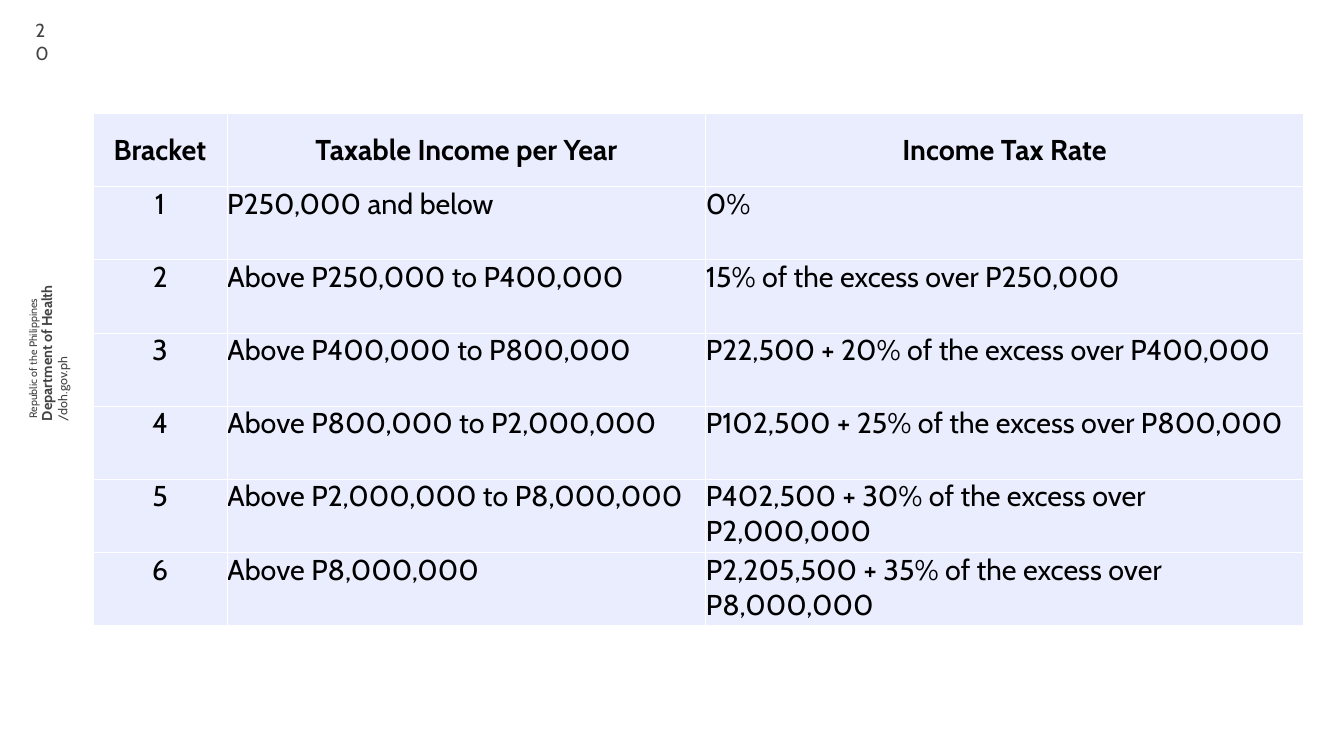
"""Build the slide with the income tax brackets."""
from dataclasses import dataclass
from typing import Any

import pptx
import pptx.dml.color
import pptx.enum.text
import pptx.oxml
import pptx.oxml.ns
import pptx.util

SCALE = 9144
GREY, BLACK, WHITE, PALE = "434343", "000000", "FFFFFF", "E9EDFD"
LEFT = pptx.enum.text.PP_ALIGN.LEFT
MID = pptx.enum.text.PP_ALIGN.CENTER
TOP = pptx.enum.text.MSO_ANCHOR.TOP
CORE = pptx.enum.text.MSO_ANCHOR.MIDDLE
FIT = pptx.enum.text.MSO_AUTO_SIZE.SHAPE_TO_FIT_TEXT
FIXED = pptx.enum.text.MSO_AUTO_SIZE.NONE
SIDES = ("left", "right", "top", "bottom")

WIDTHS = (208, 742, 926)
ROW = 113.4
BRACKETS = (
    ("Bracket", "Taxable Income per Year", "Income Tax Rate"),
    ("1", "P250,000 and below", "0%"),
    ("2", "Above P250,000 to P400,000", "15% of the excess over P250,000"),
    ("3", "Above P400,000 to P800,000", "P22,500 + 20% of the excess over P400,000"),
    ("4", "Above P800,000 to P2,000,000", "P102,500 + 25% of the excess over P800,000"),
    ("5", "Above P2,000,000 to P8,000,000", "P402,500 + 30% of the excess over P2,000,000"),
    ("6", "Above P8,000,000", "P2,205,500 + 35% of the excess over P8,000,000"),
)


@dataclass(frozen=True)
class Label:
    text: str
    left: int
    top: int
    width: int
    height: int
    size: int
    bold: bool = False
    align: Any = MID
    turn: int = 270
    inset: int = 10
    anchor: Any = TOP
    fit: Any = FIT


LABELS = (
    Label("Department of Health", -70, 524, 284, 47, 16, bold=True),
    Label("/doh.gov.ph", -45, 499, 284, 44, 14, align=LEFT),
    Label("Republic of the Philippines", -91, 536, 284, 40, 12),
    Label("20", 34, 19, 75, 90, 21, align=LEFT, turn=0, inset=21, anchor=CORE, fit=FIXED),
)


def emu(px: float) -> pptx.util.Emu:
    """Turn px into EMU."""
    return pptx.util.Emu(round(px * SCALE))


def color(code: str) -> pptx.dml.color.RGBColor:
    """Turn a hex string into a colour."""
    return pptx.dml.color.RGBColor.from_string(code)


def apply(target: Any, style: dict[str, Any]) -> None:
    """Set each format value on the target."""
    for name, value in style.items():
        setattr(target, name, value)


def inset(px: int) -> dict[str, Any]:
    """Give equal margins for all sides."""
    return {f"margin_{side}": emu(px) for side in SIDES}


def write(frame: Any, text: str, size: int, bold: bool, code: str, align: Any) -> None:
    """Write one styled paragraph."""
    line = frame.paragraphs[0]
    line.alignment = align
    run = line.add_run()
    run.text = text
    apply(run.font, {"name": "Cabin", "size": pptx.util.Pt(size), "bold": bold})
    run.font.color.rgb = color(code)


def draw_label(slide: Any, label: Label) -> None:
    """Draw one text label."""
    area = (label.left, label.top, label.width, label.height)
    box = slide.shapes.add_textbox(*map(emu, area))
    box.rotation = label.turn
    frame = box.text_frame
    apply(frame, {"word_wrap": True, "auto_size": label.fit,
                  "vertical_anchor": label.anchor, **inset(label.inset)})
    write(frame, label.text, label.size, label.bold, GREY, label.align)


def edge(cell: Any, code: str) -> None:
    """Draw thin borders around a cell."""
    props = cell._tc.get_or_add_tcPr()
    space = pptx.oxml.ns.nsdecls("a")
    for spot, side in enumerate("LRTB"):
        props.insert(spot, pptx.oxml.parse_xml(
            f'<a:ln{side} {space} w="12700"><a:solidFill><a:srgbClr val="{code}"/>'
            f'</a:solidFill></a:ln{side}>'))


def draw_table(slide: Any) -> None:
    """Draw the table of tax brackets."""
    count = len(BRACKETS)
    area = (144, 176, sum(WIDTHS), ROW * count)
    table = slide.shapes.add_table(count, len(WIDTHS), *map(emu, area)).table
    for col, width in zip(table.columns, WIDTHS):
        col.width = emu(width)
    for y, texts in enumerate(BRACKETS):
        table.rows[y].height = emu(ROW)
        head = y == 0
        for x, text in enumerate(texts):
            cell = table.cell(y, x)
            apply(cell, {"vertical_anchor": CORE if head else TOP, **inset(0)})
            cell.fill.solid()
            cell.fill.fore_color.rgb = color(PALE)
            edge(cell, WHITE)
            write(cell.text_frame, text, 32, head, BLACK, MID if head or x == 0 else LEFT)


def main() -> None:
    """Build and save the deck."""
    deck = pptx.Presentation()
    apply(deck, {"slide_width": emu(2083), "slide_height": emu(1172)})
    slide = deck.slides.add_slide(deck.slide_layouts[6])
    for label in LABELS:
        draw_label(slide, label)
    draw_table(slide)
    deck.save("out.pptx")


if __name__ == "__main__":
    main()
